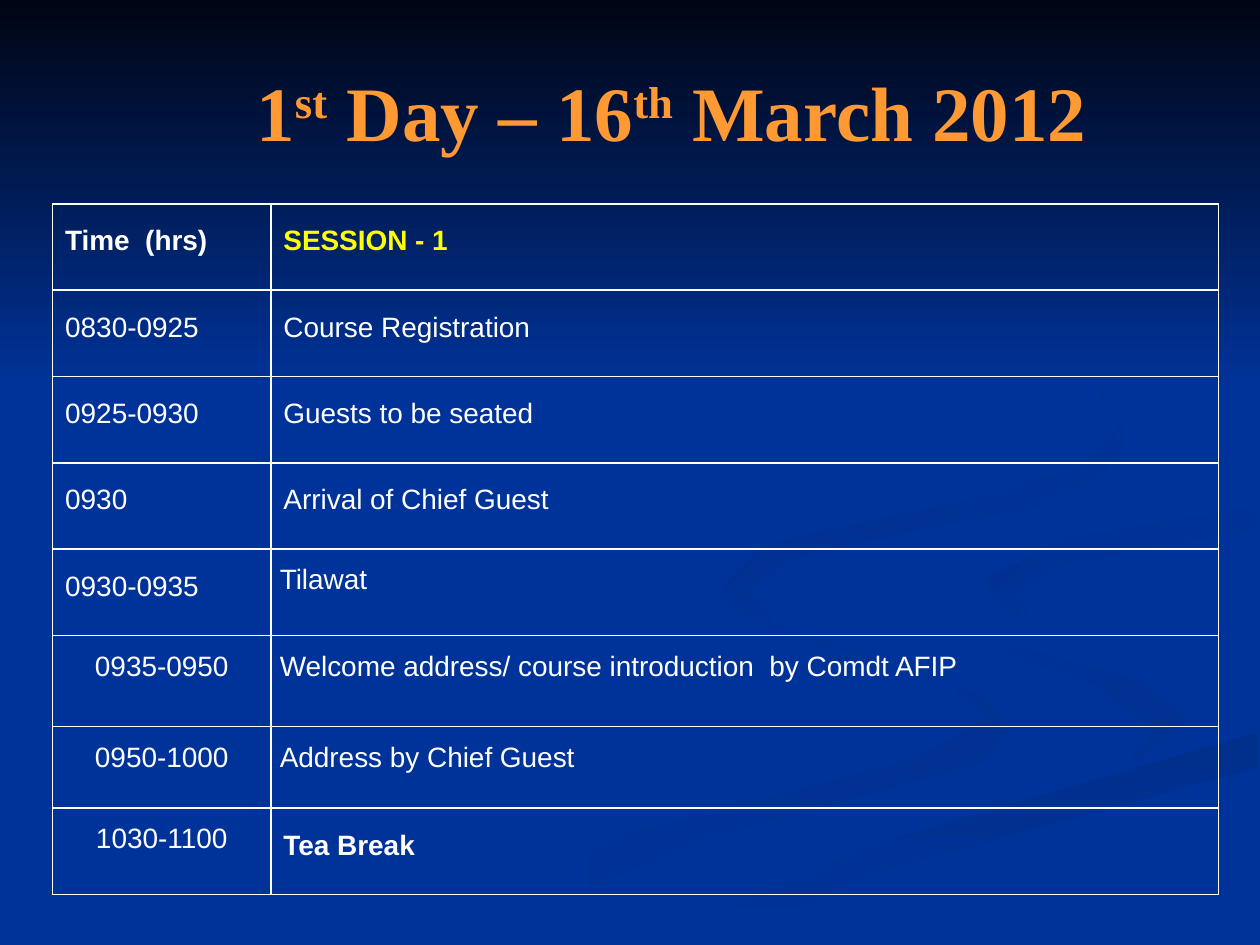
from lxml import etree
from pptx import Presentation
from pptx.dml.color import RGBColor
from pptx.enum.shapes import MSO_SHAPE
from pptx.enum.text import MSO_ANCHOR, PP_ALIGN
from pptx.oxml.ns import qn
from pptx.util import Cm, Pt

RECTANGLE = MSO_SHAPE.RECTANGLE
MIDDLE = MSO_ANCHOR.MIDDLE
TOP = MSO_ANCHOR.TOP
LEFT = PP_ALIGN.LEFT
CENTER = PP_ALIGN.CENTER

COLORS = {
    "blue": "003399",
    "night": "000514",
    "ribbon": "003193",
    "ribbon_dark": "002F8C",
    "ribbon_mid": "003091",
    "ribbon_top": "002F8E",
    "title": "FF9933",
    "session": "FFFF00",
    "white": "FFFFFF",
}


def rgb(name):
    return RGBColor.from_string(COLORS[name])


def paint(shape, first, last, angle):
    """Fill with a two-stop gradient, angle clockwise, without line or shadow."""
    shape.shadow.inherit = False
    shape.line.fill.background()
    shape.fill.gradient()
    shape.fill.gradient_angle = (360 - angle) % 360
    for stop, name, position in zip(shape.fill.gradient_stops, (first, last), (0, 1)):
        stop.color.rgb = rgb(name)
        stop.position = position


prs = Presentation()
prs.slide_width = Cm(25.4)
prs.slide_height = Cm(19.05)
slide = prs.slides.add_slide(prs.slide_layouts[5])
slide.background.fill.solid()
slide.background.fill.fore_color.rgb = rgb("blue")

# Background ribbons: first colour, last colour, angle, outline in 0.01 inch
RIBBONS = [
    ("blue", "ribbon", 0, [
        (781, 553), (614, 496), (575, 459), (572, 476), (611, 499), (752, 543),
        (785, 570), (727, 602), (499, 661), (300, 749), (361, 749), (564, 665),
        (780, 605), (800, 581)]),
    ("blue", "ribbon", 45, [
        (943, 570), (905, 540), (758, 498), (724, 464), (746, 500), (868, 544),
        (918, 581), (894, 605), (932, 589)]),
    ("ribbon_dark", "blue", 90, [
        (503, 749), (571, 749), (695, 692), (998, 609), (998, 581), (764, 647),
        (630, 693)]),
    ("blue", "blue", 0, [
        (725, 464), (758, 498), (905, 540), (943, 570), (902, 603), (704, 655),
        (477, 749), (519, 747), (696, 669), (999, 581), (999, 538), (817, 492),
        (782, 460), (850, 427), (999, 402), (999, 387), (770, 427)]),
    ("ribbon_mid", "blue", 45, [
        (781, 460), (791, 478), (826, 496), (805, 472), (843, 448), (998, 420),
        (998, 402), (849, 427)]),
    ("ribbon_top", "blue", 45, [
        (683, 430), (825, 402), (883, 370), (894, 344), (864, 291), (762, 233),
        (846, 279), (889, 335), (861, 370), (763, 398), (605, 433), (577, 462),
        (622, 500), (593, 470), (624, 444)]),
]
for first, last, angle, outline in RIBBONS:
    builder = slide.shapes.build_freeform(*outline[0], scale=Cm(0.0254))
    builder.add_line_segments(outline[1:], close=True)
    paint(builder.convert_to_shape(), first, last, angle)

sky = slide.shapes.add_shape(RECTANGLE, 0, 0, prs.slide_width, Cm(7.82))
paint(sky, "night", "blue", 90)

# Title, brought in front of the background
title = slide.shapes.title
title.element.getparent().append(title.element)
title.left, title.top, title.width, title.height = Cm(3.28), Cm(0.64), Cm(20.52), Cm(3.18)
title.text_frame.word_wrap = True
title.text_frame.vertical_anchor = MIDDLE
heading = title.text_frame.paragraphs[0]
heading.alignment = CENTER
for text, raised in [("1", False), ("st", True), (" Day – 16", False),
                     ("th", True), (" March 2012", False)]:
    run = heading.add_run()
    run.text = text
    run.font.name = "Times New Roman"
    run.font.size = Pt(44)
    run.font.bold = True
    run.font.color.rgb = rgb("title")
    if raised:
        run._r.get_or_add_rPr().set("baseline", "30000")

# Programme: time, event
PROGRAMME = [
    ("Time  (hrs)", "SESSION - 1"),
    ("0830-0925", "Course Registration"),
    ("0925-0930", "Guests to be seated"),
    ("0930", "Arrival of Chief Guest"),
    ("0930-0935", "Tilawat"),
    ("0935-0950", "Welcome address/ course introduction  by Comdt AFIP"),
    ("0950-1000", "Address by Chief Guest"),
    ("1030-1100", "Tea Break"),
]
ROW_HEIGHT = 1.74
OTHER_HEIGHTS = {"0935-0950": 1.84, "0950-1000": 1.64}
CENTERED_TIMES = {"0935-0950", "0950-1000", "1030-1100"}
TIGHT = CENTERED_TIMES | {event for _, event in PROGRAMME[4:7]}
BOLD = {"Time  (hrs)", "SESSION - 1", "Tea Break"}

table = slide.shapes.add_table(
    len(PROGRAMME), 2, Cm(1.06), Cm(4.11), Cm(23.5), Cm(13.92)).table
table.first_row = False
table.horz_banding = False
table.columns[0].width = Cm(4.4)
table.columns[1].width = Cm(19.1)

for row, texts in enumerate(PROGRAMME):
    table.rows[row].height = Cm(OTHER_HEIGHTS.get(texts[0], ROW_HEIGHT))
    for column, text in enumerate(texts):
        cell = table.cell(row, column)
        cell.vertical_anchor = TOP
        if text in TIGHT:
            cell.margin_left = cell.margin_right = Cm(0.18)
            cell.margin_top = cell.margin_bottom = 0
        properties = cell._tc.get_or_add_tcPr()
        for side in ("a:lnL", "a:lnR", "a:lnT", "a:lnB"):
            border = etree.SubElement(properties, qn(side), w=str(Pt(1)))
            solid = etree.SubElement(border, qn("a:solidFill"))
            etree.SubElement(solid, qn("a:srgbClr"), val=COLORS["white"])
        cell.fill.background()

        entry = cell.text_frame.paragraphs[0]
        entry.line_spacing = 1.5
        entry.alignment = LEFT
        if text in CENTERED_TIMES:
            entry.alignment = CENTER
            entry.space_after = Pt(10)
        run = entry.add_run()
        run.text = text
        run.font.name = "Arial"
        run.font.size = Pt(16)
        run.font.bold = text in BOLD
        run.font.color.rgb = rgb("session" if text == "SESSION - 1" else "white")

prs.save("out.pptx")
